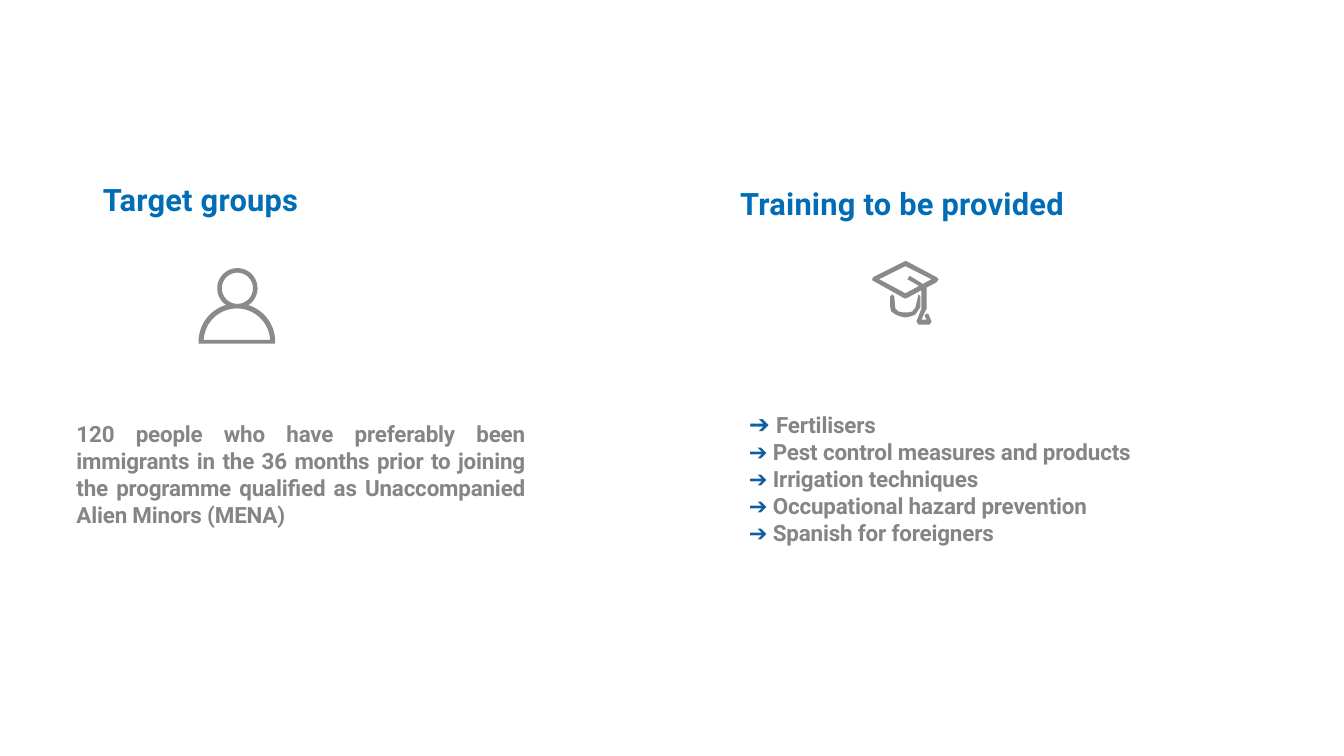
"""Build a slide on the target groups and training of a programme."""
from math import cos, radians, sin

from pptx import Presentation
from pptx.dml.color import RGBColor
from pptx.enum.text import MSO_AUTO_SIZE, PP_ALIGN
from pptx.util import Emu, Pt

PX = 9144
THEME = {
    "heading": {"name": "Roboto", "size": 22, "color": "006DB6", "bold": True, "spacing": 20},
    "body": {"name": "Roboto", "size": 16, "color": "858585", "bold": True, "spacing": -10},
    "first_arrow": {"name": "Karla", "size": 18, "color": "115DA2", "bold": False, "spacing": 0},
    "arrow": {"name": "Karla", "size": 16, "color": "115DA2", "bold": False, "spacing": 0},
    "icon": "8A8A8A",
}


def add_text(slide, box, insets, lines, alignment=PP_ALIGN.LEFT):
    """Add a text box whose lines are lists of (text, style) runs."""
    shape = slide.shapes.add_textbox(*(Emu(length * PX) for length in box))
    frame = shape.text_frame
    frame.word_wrap = True
    frame.auto_size = MSO_AUTO_SIZE.SHAPE_TO_FIT_TEXT
    for side, inset in zip(("left", "top", "right", "bottom"), insets):
        setattr(frame, f"margin_{side}", Emu(inset * PX))
    for index, line in enumerate(lines):
        paragraph = frame.add_paragraph() if index else frame.paragraphs[0]
        paragraph.alignment = alignment
        for text, style in line:
            run = paragraph.add_run()
            run.text = text
            values = THEME[style]
            formats = {"name": values["name"], "size": Pt(values["size"]), "bold": values["bold"]}
            for attribute, value in formats.items():
                setattr(run.font, attribute, value)
            run.font.color.rgb = RGBColor.from_string(values["color"])
            run.font._element.set("spc", str(values["spacing"]))


def arc(center_x, center_y, radius, start, end, steps=32):
    """Return points along an arc, with angles in degrees clockwise from the right."""
    angles = [radians(start + (end - start) * step / steps) for step in range(steps + 1)]
    return [(center_x + radius * cos(angle), center_y + radius * sin(angle)) for angle in angles]


presentation = Presentation()
presentation.slide_width = Emu(1333 * PX)
presentation.slide_height = Emu(750 * PX)
slide = presentation.slides.add_slide(presentation.slide_layouts[6])

heading_insets = (1, 2, 0, 0)
body_insets = (10, 5, 10, 5)
add_text(slide, (101, 177, 319, 39), heading_insets, [[("Target groups", "heading")]])

cap_board = [
    [(898, 259), (866, 275), (865, 278), (897, 296), (899, 296), (929, 280), (931, 277), (929, 275), (899, 259)],
    [(898, 264), (924, 277), (898, 291), (872, 277)],
]
cap_bowl = [[
    (885, 292), (883, 294), (883, 305), (884, 309), (888, 312), (893, 314), (898, 315),
    (903, 314), (908, 312), (912, 306), (913, 305), (913, 294), (911, 292), (908, 305),
    (905, 309), (901, 310), (896, 310), (891, 309), (888, 306), (887, 294),
]]
cap_tassel = [[
    (902, 274), (900, 277), (914, 285), (914, 306), (909, 319), (911, 322), (922, 322),
    (924, 319), (921, 312), (919, 311), (917, 313), (919, 317), (914, 317), (918, 308),
    (919, 307), (919, 284), (903, 274),
]]
person = [
    arc(235.5, 286, 20, 122, 418) + arc(235, 339, 38, -73, 0)
    + [(273, 341), (197, 341)] + arc(235, 339, 38, 180, 253),
    arc(235.5, 286, 15.5, 360, 0),
    arc(235, 339, 33, 357, 183),
]
for contours in (cap_board, cap_bowl, cap_tassel, person):
    outlines = [[(x * PX, y * PX) for x, y in contour] for contour in contours]
    builder = slide.shapes.build_freeform(*outlines[0][0])
    for index, outline in enumerate(outlines):
        if index:
            builder.move_to(*outline[0])
        builder.add_line_segments(outline[1:], close=True)
    icon = builder.convert_to_shape()
    icon.shadow.inherit = False
    icon.fill.solid()
    icon.fill.fore_color.rgb = RGBColor.from_string(THEME["icon"])
    icon.line.fill.background()

add_text(slide, (733, 181, 358, 38), heading_insets, [[("Training to be provided", "heading")]])

target_group = (
    "120 people who have preferably been immigrants in the 36 months prior to joining "
    "the programme qualified as Unaccompanied Alien Minors (MENA)"
)
add_text(slide, (66, 412, 465, 118), body_insets, [[(target_group, "body")]], PP_ALIGN.JUSTIFY)

courses = [
    "Fertilisers",
    "Pest control measures and products",
    "Irrigation techniques",
    "Occupational hazard prevention",
    "Spanish for foreigners",
]
course_lines = [
    [("➔ ", "arrow" if index else "first_arrow"), (course, "body")]
    for index, course in enumerate(courses)
]
add_text(slide, (733, 400, 483, 148), body_insets, course_lines)

presentation.save("out.pptx")
